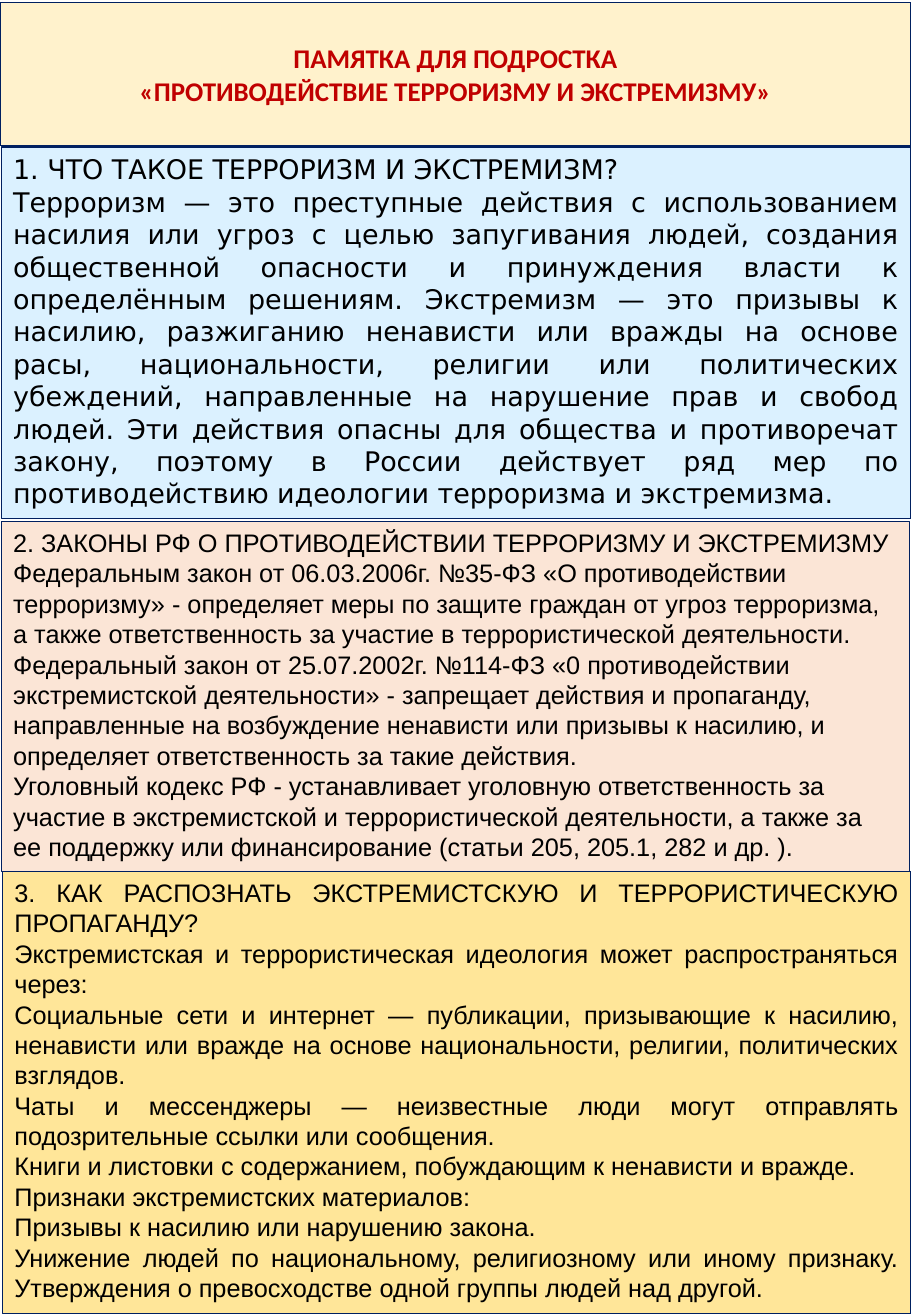
from lxml import etree
from pptx import Presentation
from pptx.dml.color import RGBColor
from pptx.enum.shapes import MSO_SHAPE
from pptx.enum.text import MSO_ANCHOR, PP_ALIGN
from pptx.oxml.ns import qn
from pptx.util import Pt

RECTANGLE = MSO_SHAPE.RECTANGLE
TOP, MIDDLE = MSO_ANCHOR.TOP, MSO_ANCHOR.MIDDLE
LEFT, CENTER, JUSTIFY = PP_ALIGN.LEFT, PP_ALIGN.CENTER, PP_ALIGN.JUSTIFY

COLORS = {
    "border": "002060",
    "text": "000000",
    "title": "C00000",
    "cream": "FFF2CC",
    "blue": "CCECFF",
    "peach": "FBE5D6",
    "yellow": "FFE699",
}

TITLE = [
    "ПАМЯТКА ДЛЯ ПОДРОСТКА",
    "«ПРОТИВОДЕЙСТВИЕ ТЕРРОРИЗМУ И ЭКСТРЕМИЗМУ»",
]

DEFINITIONS = [
    "1. ЧТО ТАКОЕ ТЕРРОРИЗМ И ЭКСТРЕМИЗМ?",
    "Терроризм — это преступные действия с использованием насилия или угроз "
    "с целью запугивания людей, создания общественной опасности и принуждения "
    "власти к определённым решениям. Экстремизм — это призывы к насилию, "
    "разжиганию ненависти или вражды на основе расы, национальности, религии "
    "или политических убеждений, направленные на нарушение прав и свобод людей. "
    "Эти действия опасны для общества и противоречат закону, поэтому в России "
    "действует ряд мер по противодействию идеологии терроризма и экстремизма.",
]

LAWS = [
    "2. ЗАКОНЫ РФ О ПРОТИВОДЕЙСТВИИ ТЕРРОРИЗМУ И ЭКСТРЕМИЗМУ",
    "Федеральным закон от 06.03.2006г. №35-ФЗ «О противодействии терроризму» - "
    "определяет меры по защите граждан от угроз терроризма, а также "
    "ответственность за участие в террористической деятельности. "
    "Федеральный закон от 25.07.2002г. №114-ФЗ «0 противодействии "
    "экстремистской деятельности» - запрещает действия и пропаганду, "
    "направленные на возбуждение ненависти или призывы к насилию, и определяет "
    "ответственность за такие действия.",
    "Уголовный кодекс РФ - устанавливает уголовную ответственность за участие "
    "в экстремистской и террористической деятельности, а также за ее поддержку "
    "или финансирование (статьи 205, 205.1, 282 и др. ).",
]

SIGNS = [
    "3. КАК РАСПОЗНАТЬ ЭКСТРЕМИСТСКУЮ И ТЕРРОРИСТИЧЕСКУЮ ПРОПАГАНДУ?",
    "Экстремистская и террористическая идеология может распространяться через:",
    "Социальные сети и интернет — публикации, призывающие к насилию, ненависти "
    "или вражде на основе национальности, религии, политических взглядов.",
    "Чаты и мессенджеры — неизвестные люди могут отправлять подозрительные "
    "ссылки или сообщения.",
    "Книги и листовки с содержанием, побуждающим к ненависти и вражде.",
    "Признаки экстремистских материалов:",
    "Призывы к насилию или нарушению закона.",
    "Унижение людей по национальному, религиозному или иному признаку. "
    "Утверждения о превосходстве одной группы людей над другой.",
]


def rgb(name):
    return RGBColor.from_string(COLORS[name])


def add_panel(page, bounds, fill):
    panel = page.shapes.add_shape(RECTANGLE, *(Pt(value) for value in bounds))
    panel.shadow.inherit = False
    panel.fill.solid()
    panel.fill.fore_color.rgb = rgb(fill)
    panel.line.color.rgb = rgb("border")
    panel.line.width = Pt(0.75)
    return panel


def set_opacity(panel, percent):
    color = panel.fill._xPr.find(qn("a:solidFill"))[0]
    etree.SubElement(color, qn("a:alpha"), val=str(percent * 1000))


def write_text(panel, lines, font, size, align, color="text", bold=False, anchor=TOP):
    frame = panel.text_frame
    frame.word_wrap = True
    frame.vertical_anchor = anchor
    frame.text = "\n".join(lines)
    for para in frame.paragraphs:
        para.alignment = align
        para.font.name = font
        para.font.size = Pt(size)
        para.font.bold = bold
        para.font.color.rgb = rgb(color)


def main():
    deck = Presentation()
    deck.slide_width, deck.slide_height = Pt(540), Pt(779.76)
    page = deck.slides.add_slide(deck.slide_layouts[6])

    definitions = add_panel(page, (0.72, 87.12, 539.28, 220.32), "blue")
    set_opacity(definitions, 69)
    write_text(definitions, DEFINITIONS, "DejaVu Sans", 16, JUSTIFY)

    laws = add_panel(page, (0.72, 308.88, 538.56, 207.36), "peach")
    write_text(laws, LAWS, "Arial", 15, LEFT)

    signs = add_panel(page, (1.44, 516.24, 538.56, 262.08), "yellow")
    write_text(signs, SIGNS, "Arial", 15, JUSTIFY)

    title = add_panel(page, (0, 1.44, 540, 84.96), "cream")
    write_text(title, TITLE, "Calibri", 16, CENTER, "title", True, MIDDLE)

    deck.save("out.pptx")


if __name__ == "__main__":
    main()
